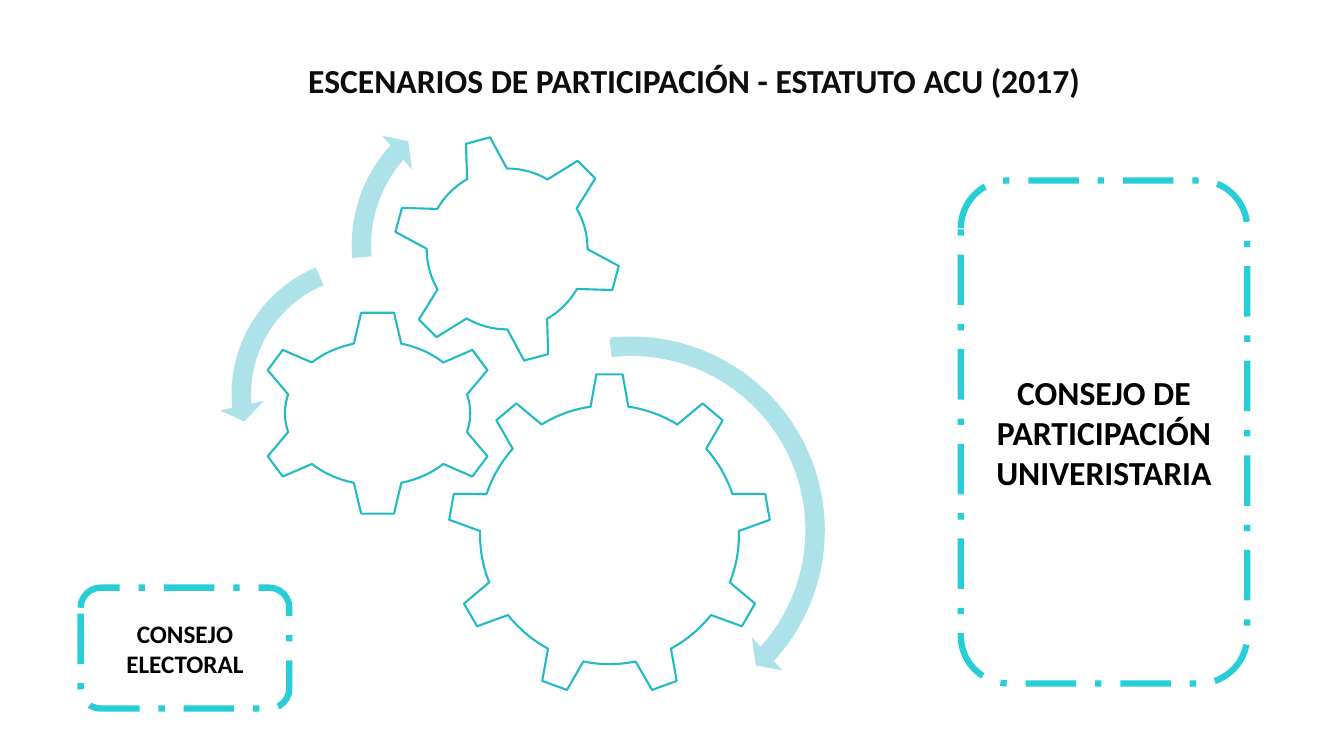
from dataclasses import dataclass

from pptx import Presentation
from pptx.dml.color import RGBColor
from pptx.enum.dml import MSO_LINE
from pptx.enum.shapes import MSO_SHAPE
from pptx.enum.text import MSO_ANCHOR, PP_ALIGN
from pptx.util import Emu, Pt

PX = 9144  # 100 px to the inch
WHITE = RGBColor(0xFF, 0xFF, 0xFF)
BLACK = RGBColor(0x00, 0x00, 0x00)
TITLE_INK = RGBColor(0x0D, 0x0D, 0x0D)
GEAR_LINE = RGBColor(0x23, 0xBB, 0xC3)
ARROW_FILL = RGBColor(0xAD, 0xE3, 0xE8)
FRAME_LINE = RGBColor(0x27, 0xCE, 0xD7)

GEAR_6, GEAR_9 = MSO_SHAPE.GEAR_6, MSO_SHAPE.GEAR_9
ARC_RIGHT, ARC_LEFT = MSO_SHAPE.CIRCULAR_ARROW, MSO_SHAPE.LEFT_CIRCULAR_ARROW
ROUNDED = MSO_SHAPE.ROUNDED_RECTANGLE
DASH_DOT = MSO_LINE.LONG_DASH_DOT
MIDDLE, CENTER = MSO_ANCHOR.MIDDLE, PP_ALIGN.CENTER


@dataclass(frozen=True)
class Box:
    left: int
    top: int
    width: int
    height: int

    def emu(self) -> list[Emu]:
        return [Emu(v * PX) for v in (self.left, self.top, self.width, self.height)]


@dataclass(frozen=True)
class Gear:
    preset: MSO_SHAPE
    box: Box
    rotation: int = 0


@dataclass(frozen=True)
class Arc:
    preset: MSO_SHAPE
    box: Box
    adjustments: tuple[float, ...]


@dataclass(frozen=True)
class Council:
    text: str
    box: Box
    size: int


GEARS = [
    Gear(GEAR_9, Box(444, 370, 321, 321)),
    Gear(GEAR_6, Box(252, 308, 245, 204)),
    Gear(GEAR_6, Box(389, 133, 228, 228), 345),
]
# Adjustments: thickness, head angle, end angle, start angle, head width
ARCS = [
    Arc(ARC_RIGHT, Box(421, 321, 410, 410), (0.047, 2.99, 25.379, 158.152, 0.055)),
    Arc(ARC_LEFT, Box(217, 242, 298, 298), (0.065, 4.3, 104.891, 148.378, 0.075)),
    Arc(ARC_RIGHT, Box(336, 83, 321, 321), (0.06, 3.941, 133.138, 105.082, 0.07)),
]
COUNCILS = [
    Council("CONSEJO DE PARTICIPACIÓN UNIVERISTARIA", Box(953, 179, 284, 499), 24),
    Council("CONSEJO ELECTORAL", Box(80, 583, 207, 120), 18),
]


def add_preset(shapes, preset: MSO_SHAPE, box: Box, fill: RGBColor,
               line: RGBColor | None = None, weight: float = 0):
    s = shapes.add_shape(preset, *box.emu())
    s.shadow.inherit = False
    s.fill.solid()
    s.fill.fore_color.rgb = fill
    if line is None:
        s.line.fill.background()
    else:
        s.line.color.rgb = line
        s.line.width = Pt(weight)
    return s


def write(s, text: str, size: int, color: RGBColor) -> None:
    tf = s.text_frame
    tf.word_wrap = True
    tf.vertical_anchor = MIDDLE
    p = tf.paragraphs[0]
    p.alignment = CENTER
    r = p.add_run()
    r.text = text
    for name, value in {"name": "Calibri", "size": Pt(size), "bold": True}.items():
        setattr(r.font, name, value)
    r.font.color.rgb = color


def add_gear(shapes, gear: Gear) -> None:
    s = add_preset(shapes, gear.preset, gear.box, WHITE, GEAR_LINE, 1.5)
    s.rotation = gear.rotation


def add_arc(shapes, arc: Arc) -> None:
    s = add_preset(shapes, arc.preset, arc.box, ARROW_FILL)
    for i, value in enumerate(arc.adjustments):
        s.adjustments[i] = value


def add_council(shapes, council: Council) -> None:
    s = add_preset(shapes, ROUNDED, council.box, WHITE, FRAME_LINE, 4.5)
    s.line.dash_style = DASH_DOT
    write(s, council.text, council.size, BLACK)


def main() -> None:
    prs = Presentation()
    prs.slide_width, prs.slide_height = Emu(1333 * PX), Emu(750 * PX)
    shapes = prs.slides.add_slide(prs.slide_layouts[6]).shapes

    title = shapes.add_textbox(*Box(167, 52, 1043, 55).emu())
    write(title, "ESCENARIOS DE PARTICIPACIÓN - ESTATUTO ACU (2017)", 24, TITLE_INK)

    gearing = shapes.add_group_shape().shapes
    for gear in GEARS:
        add_gear(gearing, gear)
    for arc in ARCS:
        add_arc(gearing, arc)
    for council in COUNCILS:
        add_council(shapes, council)

    prs.save("out.pptx")


if __name__ == "__main__":
    main()
